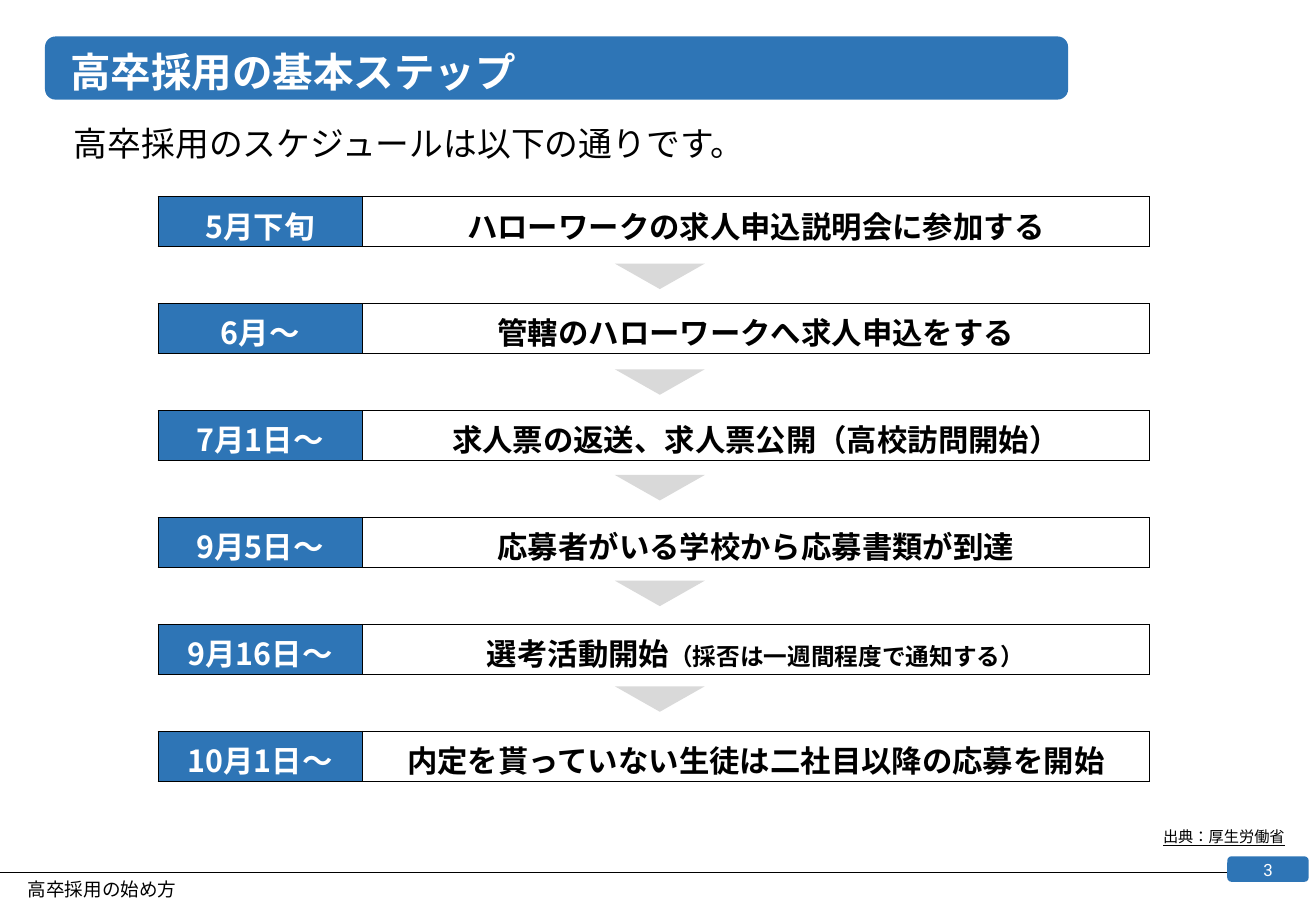
from lxml.etree import SubElement
from pptx import Presentation
from pptx.dml.color import RGBColor
from pptx.enum.lang import MSO_LANGUAGE_ID as Lang
from pptx.enum.shapes import MSO_CONNECTOR as Connector, MSO_SHAPE as Shape
from pptx.enum.text import MSO_ANCHOR as Anchor, PP_ALIGN as Align
from pptx.oxml.ns import qn
from pptx.util import Inches, Pt

TITLE = "高卒採用の基本ステップ"
LEAD = "高卒採用のスケジュールは以下の通りです。"
FOOTER = "高卒採用の始め方"
SOURCE = "出典：厚生労働省"
PAGE = "3"
STEPS = [
    ("5月下旬", "ハローワークの求人申込説明会に参加する", ""),
    ("6月～", "管轄のハローワークへ求人申込をする", ""),
    ("7月1日～", "求人票の返送、求人票公開（高校訪問開始）", ""),
    ("9月5日～", "応募者がいる学校から応募書類が到達", ""),
    ("9月16日～", "選考活動開始", "（採否は一週間程度で通知する）"),
    ("10月1日～", "内定を貰っていない生徒は二社目以降の応募を開始", ""),
]

COLORS = {"blue": "2E75B6", "white": "FFFFFF", "black": "000000", "arrow": "D9D9D9"}
JAPANESE = "Noto Sans CJK JP"
FORMATS = {
    "title": {"size": Pt(24), "bold": True, "color": "white"},
    "lead": {"size": Pt(20), "color": "black"},
    "footer": {"size": Pt(11), "color": "black"},
    "source": {"size": Pt(9), "underline": True, "color": "black"},
    "page": {"size": Pt(10), "name": "Roboto", "color": "white"},
    "date": {"size": Pt(18), "bold": True, "color": "white"},
    "action": {"size": Pt(18), "bold": True, "color": "black"},
    "note": {"size": Pt(14), "bold": True, "color": "black"},
}

STEP_LEFT, STEP_TOP, STEP_PITCH, STEP_HEIGHT = 1.3, 1.62, 0.88, 0.41
DATE_WIDTH, ACTION_WIDTH = 1.68, 6.48
ARROW_TOP, ARROW_PITCH = 2.17, 0.87

prs = Presentation()
prs.slide_width, prs.slide_height = Inches(10.83), Inches(7.5)
slide = prs.slides.add_slide(prs.slide_layouts[6])


def rgb(color):
    return RGBColor.from_string(COLORS[color])


def box(*inches):
    return [Inches(value) for value in inches]


def add_run(paragraph, text, kind):
    run = paragraph.add_run()
    run.text = text
    values = {"name": JAPANESE, "language_id": Lang.JAPANESE, **FORMATS[kind]}
    run.font.color.rgb = rgb(values.pop("color"))
    for key, value in values.items():
        setattr(run.font, key, value)
    SubElement(run.font._element, qn("a:ea"), typeface=values["name"])


def add_text(place, text, kind, align=Align.LEFT, anchor=Anchor.TOP, spacing=0.9):
    frame = slide.shapes.add_textbox(*box(*place)).text_frame
    frame.word_wrap = True
    frame.vertical_anchor = anchor
    paragraph = frame.paragraphs[0]
    paragraph.alignment = align
    paragraph.line_spacing = spacing
    add_run(paragraph, text, kind)


def add_block(preset, place, color):
    block = slide.shapes.add_shape(preset, *box(*place))
    block.shadow.inherit = False
    block.fill.solid()
    block.fill.fore_color.rgb = rgb(color)
    block.line.fill.background()
    return block


def fill_cell(cell, color, *runs):
    """Give a cell thin black borders, a fill and centred (text, kind) runs."""
    properties = cell._tc.get_or_add_tcPr()
    for side in ("lnL", "lnR", "lnT", "lnB"):
        border = SubElement(properties, qn(f"a:{side}"), w=str(Pt(0.5)))
        paint = SubElement(border, qn("a:solidFill"))
        SubElement(paint, qn("a:srgbClr"), val=COLORS["black"])
    cell.fill.solid()
    cell.fill.fore_color.rgb = rgb(color)
    cell.vertical_anchor = Anchor.MIDDLE
    paragraph = cell.text_frame.paragraphs[0]
    paragraph.alignment = Align.CENTER
    for text, kind in runs:
        if text:
            add_run(paragraph, text, kind)


def add_step(top, date, action, note):
    place = box(STEP_LEFT, top, DATE_WIDTH + ACTION_WIDTH, STEP_HEIGHT)
    table = slide.shapes.add_table(1, 2, *place).table
    table.first_row = table.horz_banding = False
    for column, width in zip(table.columns, (DATE_WIDTH, ACTION_WIDTH)):
        column.width = Inches(width)
    fill_cell(table.cell(0, 0), "blue", (date, "date"))
    fill_cell(table.cell(0, 1), "white", (action, "action"), (note, "note"))


add_block(Shape.ROUNDED_RECTANGLE, (0.37, 0.3, 8.42, 0.52), "blue")
footer_rule = slide.shapes.add_connector(Connector.STRAIGHT, *box(0, 7.18, 10.1, 7.18))
footer_rule.line.color.rgb = rgb("black")
footer_rule.line.width = Pt(0.25)
SubElement(footer_rule._element.spPr, qn("a:effectLst"))
add_block(Shape.ROUNDED_RECTANGLE, (10.1, 7.05, 0.67, 0.21), "blue")

add_text((0.48, 0.4, 7.96, 0.42), TITLE, "title", anchor=Anchor.MIDDLE)
add_text((10.1, 6.96, 0.67, 0.4), PAGE, "page", Align.CENTER, Anchor.MIDDLE, 1.0)
add_text((0.51, 1, 7.47, 0.37), LEAD, "lead")
add_text((0.13, 7.2, 3.62, 0.31), FOOTER, "footer")
add_text((8.31, 6.78, 2.36, 0.23), SOURCE, "source", Align.RIGHT)

for index, step in enumerate(STEPS):
    add_step(STEP_TOP + index * STEP_PITCH, *step)
for index in range(len(STEPS) - 1):
    arrow_place = (5.06, ARROW_TOP + index * ARROW_PITCH, 0.74, 0.21)
    add_block(Shape.ISOSCELES_TRIANGLE, arrow_place, "arrow").rotation = 180

prs.save("out.pptx")
